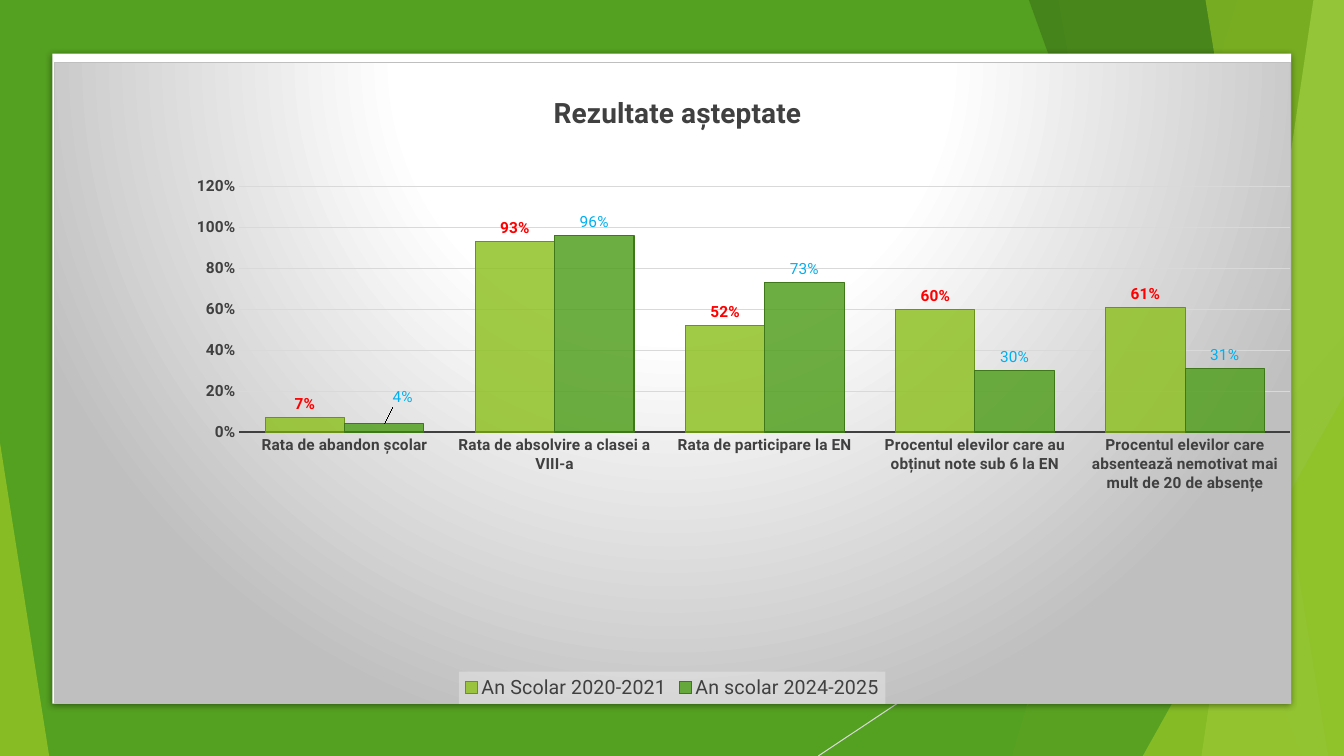
from collections import namedtuple

from lxml.etree import SubElement
from pptx import Presentation
from pptx.chart.data import CategoryChartData
from pptx.dml.color import RGBColor
from pptx.enum.chart import XL_CHART_TYPE, XL_LABEL_POSITION, XL_LEGEND_POSITION, XL_TICK_MARK
from pptx.enum.shapes import MSO_CONNECTOR, MSO_SHAPE
from pptx.oxml import parse_xml
from pptx.oxml.ns import nsdecls, qn
from pptx.util import Cm, Pt

FONT = "Roboto"
DARK, GRAY, PALE = "404040", "BFBFBF", "D9D9D9"
LIME, GREEN, FOREST = "90C226", "54A021", "3F7819"

Box = namedtuple("Box", "left top width height")  # centimetres

CATEGORIES = [
    "Rata de abandon școlar",
    "Rata de absolvire a clasei a VIII-a",
    "Rata de participare la EN",
    "Procentul elevilor care au obținut note sub 6 la EN",
    "Procentul elevilor care absentează nemotivat mai mult de 20 de absențe",
]
# name, values, fill, outline, label colour, bold labels
SCHOOL_YEARS = [
    ("An Scolar 2020-2021", (0.07, 0.93, 0.52, 0.6, 0.61), LIME, "6C921D", "FF0000", True),
    ("An scolar 2024-2025", (0.04, 0.96, 0.73, 0.3, 0.31), GREEN, FOREST, "00B0F0", False),
]


def color(hex_string):
    return RGBColor.from_string(hex_string)


def paint(fill, hex_string):
    fill.solid()
    fill.fore_color.rgb = color(hex_string)


def set_line(line, hex_string, width):
    line.color.rgb = color(hex_string)
    line.width = Pt(width)


def set_font(font, size, hex_string, bold=False):
    font.name, font.size, font.bold = FONT, Pt(size), bold
    font.color.rgb = color(hex_string)


def set_opacity(element, percent):
    rgb = element.find(f".//{qn('a:solidFill')}/{qn('a:srgbClr')}")
    SubElement(rgb, qn("a:alpha")).set("val", str(percent * 1000))


def finish_shape(shape, hex_string, opacity=100):
    paint(shape.fill, hex_string)
    if opacity < 100:
        set_opacity(shape.element, opacity)
    shape.line.fill.background()
    shape.shadow.inherit = False


def set_layout(parent, index, **settings):
    """Give a chart part a manual layout as its child at the given index."""
    for old in parent.findall(qn("c:layout")):
        parent.remove(old)
    layout = parse_xml(f"<c:layout {nsdecls('c')}><c:manualLayout/></c:layout>")
    for name, value in settings.items():
        SubElement(layout[0], qn(f"c:{name}")).set("val", str(value))
    parent.insert(index, layout)


def add_backdrop(slide, box):
    right, bottom = box.left + box.width, box.top + box.height

    def add_facet(top_x, bottom_x, hex_string, opacity):
        outline = slide.shapes.build_freeform(Cm(box.left + top_x), Cm(box.top), scale=1.0)
        outline.add_line_segments([
            (Cm(right), Cm(box.top)), (Cm(right), Cm(bottom)),
            (Cm(box.left + bottom_x), Cm(bottom)),
        ], close=True)
        finish_shape(outline.convert_to_shape(), hex_string, opacity)

    def add_wedge(left, top, width, apex, hex_string, opacity):
        wedge = slide.shapes.add_shape(
            MSO_SHAPE.ISOSCELES_TRIANGLE, Cm(box.left + left), Cm(box.top + top),
            Cm(width), Cm(box.height - top))
        wedge.adjustments[0] = apex
        finish_shape(wedge, hex_string, opacity)

    # Green ground and thin diagonal
    ground = slide.shapes.add_shape(MSO_SHAPE.RECTANGLE, *map(Cm, box))
    finish_shape(ground, GREEN)
    diagonal = slide.shapes.add_connector(
        MSO_CONNECTOR.STRAIGHT, Cm(right), Cm(box.top + 10.24), Cm(box.left + 20.62), Cm(bottom))
    set_line(diagonal.line, PALE, 0.75)
    SubElement(diagonal.element.spPr, qn("a:effectLst"))

    # Translucent facets, back to front
    add_facet(31.19, 25.5, LIME, 30)
    add_facet(26.67, 30.05, LIME, 20)
    add_wedge(24.82, 8.46, 9.05, 1, GREEN, 72)
    add_facet(25.93, 32.79, FOREST, 70)
    add_facet(33.1, 30.28, "C0E474", 70)
    add_facet(30.38, 33.48, LIME, 65)
    add_wedge(28.8, 9.98, 5.07, 1, LIME, 80)
    add_wedge(0, 11.15, 1.24, 0, LIME, 85)


def add_panel(slide, box):
    panel = slide.shapes.add_shape(MSO_SHAPE.RECTANGLE, *map(Cm, box))
    finish_shape(panel, "FFFFFF")
    panel.element.spPr.find(qn("a:effectLst")).append(parse_xml(
        f'<a:outerShdw {nsdecls("a")} blurRad="{Pt(5)}" dist="{Pt(1.4)}" dir="5400000">'
        '<a:srgbClr val="000000"><a:alpha val="43000"/></a:srgbClr></a:outerShdw>'))


def style_axes(chart):
    for axis in (chart.category_axis, chart.value_axis):
        axis.major_tick_mark = axis.minor_tick_mark = XL_TICK_MARK.NONE
        set_font(axis.tick_labels.font, 11, DARK, True)
    set_line(chart.category_axis.format.line, DARK, 1.5)
    percent = chart.value_axis
    percent.minimum_scale, percent.maximum_scale, percent.major_unit = 0, 1.2, 0.2
    percent.tick_labels.number_format = "0%"
    percent.tick_labels.number_format_is_linked = False
    percent.format.line.fill.background()
    set_line(percent.major_gridlines.format.line, PALE, 0.75)


def style_series(chart):
    plot = chart.plots[0]
    plot.gap_width, plot.overlap, plot.vary_by_categories = 65, 0, False
    elements = chart.element.findall(f".//{qn('c:ser')}")
    for bars, element, year in zip(plot.series, elements, SCHOOL_YEARS):
        _, _, fill, outline, label_color, bold = year
        bars.invert_if_negative = False
        paint(bars.format.fill, fill)
        set_opacity(element, 85)
        set_line(bars.format.line, outline, 0.75)
        labels = bars.data_labels
        labels.show_value = True
        labels.number_format, labels.number_format_is_linked = "0%", False
        labels.position = XL_LABEL_POSITION.OUTSIDE_END
        set_font(labels.font, 11, label_color, bold)

    # The smallest bar's label sits a little up and to the right
    dropout = plot.series[1].points[0].data_label
    set_font(dropout.font, 11, SCHOOL_YEARS[1][4])
    dropout.position = XL_LABEL_POSITION.OUTSIDE_END
    set_layout(elements[1].find(f".//{qn('c:dLbl')}"), 1, x=0.015, y=-0.02)


def add_results_chart(slide, box):
    results = CategoryChartData(number_format="0%")
    results.categories = CATEGORIES
    for name, values, *_ in SCHOOL_YEARS:
        results.add_series(name, values)
    chart = slide.shapes.add_chart(
        XL_CHART_TYPE.COLUMN_CLUSTERED, *map(Cm, box), results).chart
    set_font(chart.font, 10, "000000")
    space = chart.element

    # Title
    chart.has_title = True
    title = chart.chart_title.text_frame
    title.text = "Rezultate așteptate"
    set_font(title.paragraphs[0].runs[0].font, 20, DARK, True)
    set_layout(space.find(f".//{qn('c:title')}"), 1, xMode="edge", yMode="edge", x=0.4, y=0.04)

    style_axes(chart)
    style_series(chart)
    set_layout(space.find(f".//{qn('c:plotArea')}"), 0, layoutTarget="inner",
               xMode="edge", yMode="edge", x=0.15, y=0.193, w=0.85, h=0.383)

    # Legend on a translucent strip
    chart.has_legend = True
    chart.legend.position = XL_LEGEND_POSITION.BOTTOM
    chart.legend.include_in_layout = False
    set_font(chart.legend.font, 14, DARK)
    space.find(f".//{qn('c:legend')}/{qn('c:txPr')}").addprevious(parse_xml(
        f'<c:spPr {nsdecls("c", "a")}><a:solidFill><a:srgbClr val="F2F2F2">'
        '<a:alpha val="39000"/></a:srgbClr></a:solidFill></c:spPr>'))

    # Radial background and border
    stops = "".join(f'<a:gs pos="{pos}000"><a:srgbClr val="{shade}"/></a:gs>'
                    for pos, shade in ((0, "FFFFFF"), (39, "FFFFFF"), (100, GRAY)))
    space.find(qn("c:chart")).addnext(parse_xml(
        f'<c:spPr {nsdecls("c", "a")}><a:gradFill><a:gsLst>{stops}</a:gsLst>'
        '<a:path path="circle"><a:fillToRect l="50000" t="-80000" r="50000" b="180000"/></a:path>'
        f'</a:gradFill><a:ln w="{Pt(0.75)}"><a:solidFill><a:srgbClr val="{GRAY}"/></a:solidFill>'
        '</a:ln></c:spPr>'))


def main():
    deck = Presentation()
    deck.slide_width, deck.slide_height = Cm(33.87), Cm(19.05)
    slide = deck.slides.add_slide(deck.slide_layouts[6])
    add_backdrop(slide, Box(0, 0, 33.87, 19.05))
    add_panel(slide, Box(1.32, 1.35, 31.22, 16.38))
    add_results_chart(slide, Box(1.35, 1.57, 31.19, 16.18))
    deck.save("out.pptx")


if __name__ == "__main__":
    main()
